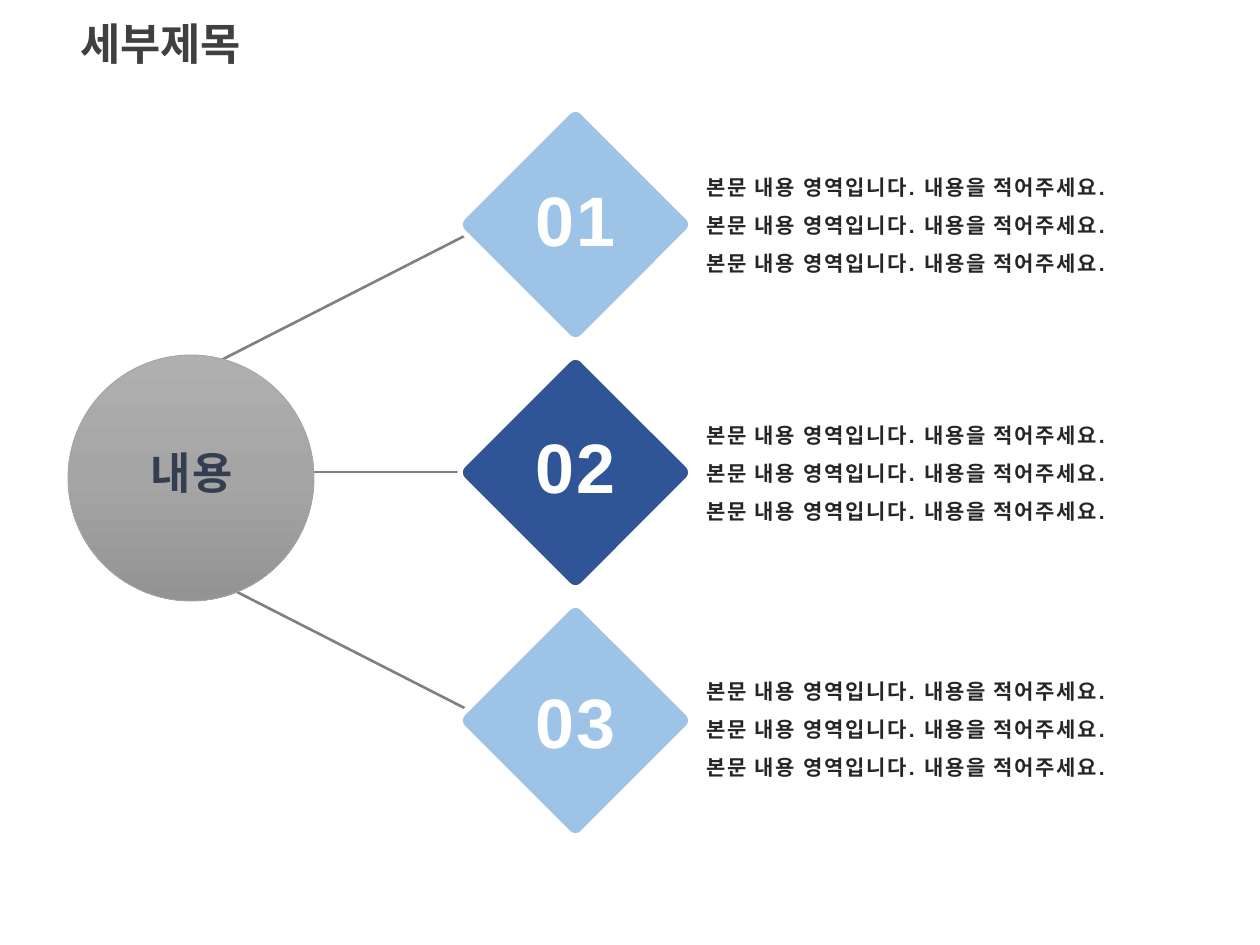
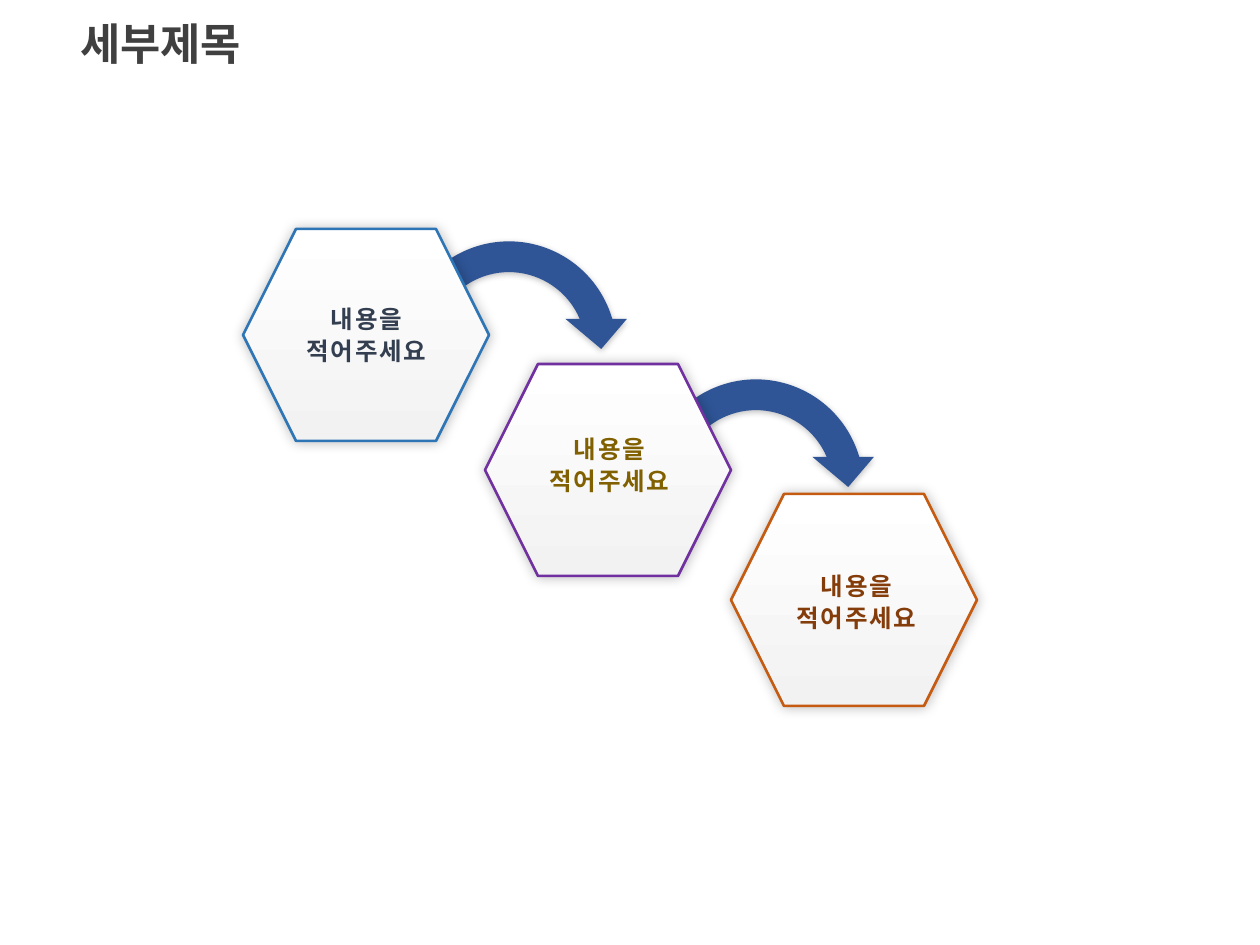
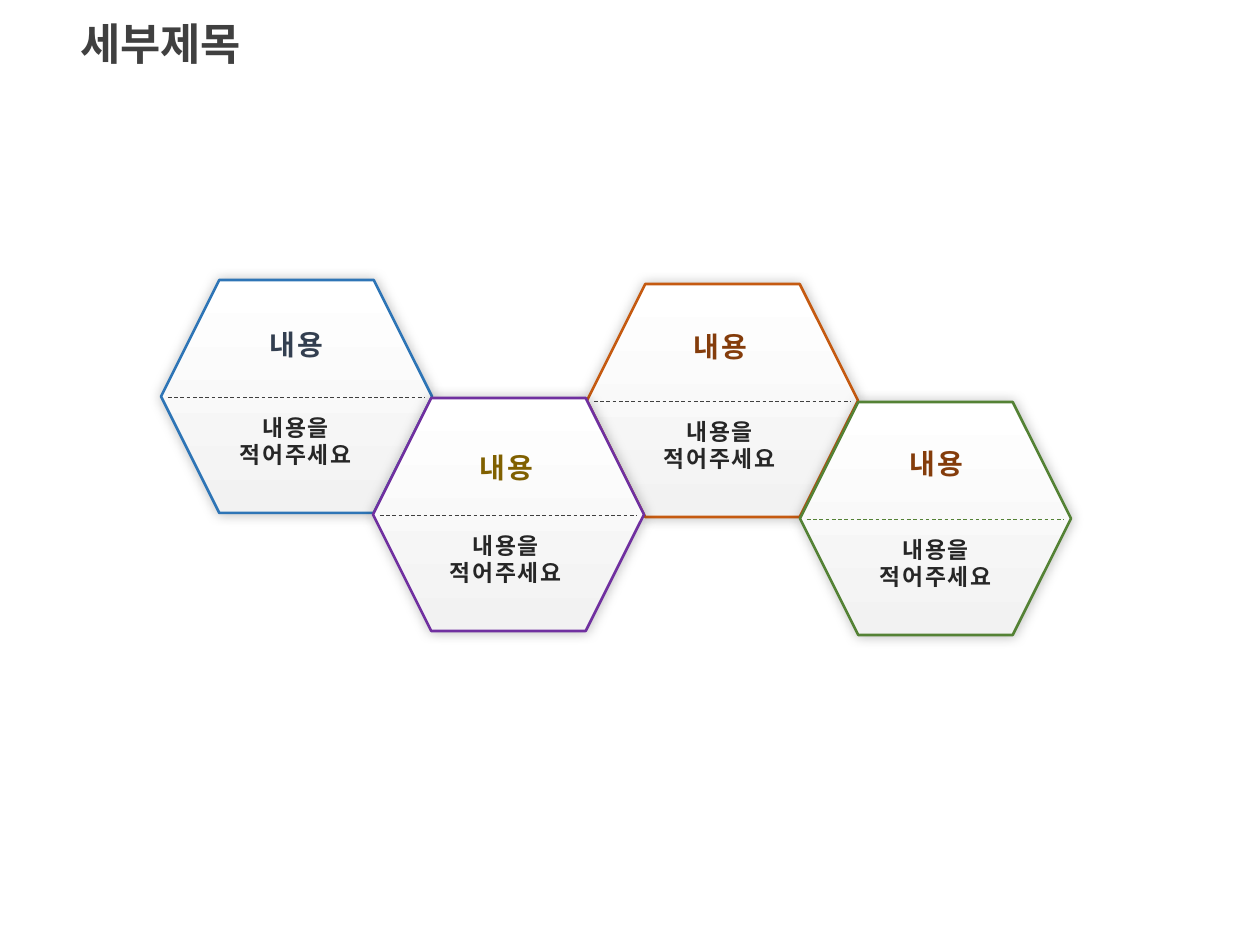
from copy import deepcopy

from lxml import etree
from pptx import Presentation
from pptx.dml.color import RGBColor
from pptx.enum.dml import MSO_LINE
from pptx.enum.shapes import MSO_CONNECTOR, MSO_SHAPE
from pptx.enum.text import MSO_ANCHOR, MSO_AUTO_SIZE, PP_ALIGN
from pptx.oxml.ns import qn
from pptx.util import Emu, Pt

# Shared scale, enum members, fonts and colours
SCALE = 914400 / 126
LEFT, CENTER = PP_ALIGN.LEFT, PP_ALIGN.CENTER
MIDDLE, TOP = MSO_ANCHOR.MIDDLE, MSO_ANCHOR.TOP
GROW = MSO_AUTO_SIZE.SHAPE_TO_FIT_TEXT
STRAIGHT, DASH = MSO_CONNECTOR.STRAIGHT, MSO_LINE.DASH
OVAL, ROUND = MSO_SHAPE.OVAL, MSO_SHAPE.ROUNDED_RECTANGLE
HEXAGON, ARROW = MSO_SHAPE.HEXAGON, MSO_SHAPE.CIRCULAR_ARROW

LATIN, HANGUL, HEAD = "Arial", "Noto Sans CJK KR", "Calibri"

WHITE = RGBColor(0xFF, 0xFF, 0xFF)
PALE = RGBColor(0xF2, 0xF2, 0xF2)
INK = RGBColor(0x26, 0x26, 0x26)
DARK = RGBColor(0x40, 0x40, 0x40)
GREY = RGBColor(0x80, 0x80, 0x80)
SILVER = RGBColor(0xAF, 0xAF, 0xAF)
STEEL = RGBColor(0xA5, 0xA5, 0xA5)
ASH = RGBColor(0x93, 0x93, 0x93)
SKY = RGBColor(0x9D, 0xC3, 0xE6)
NAVY = RGBColor(0x2F, 0x55, 0x97)
SLATE = RGBColor(0x33, 0x3F, 0x50)
OLIVE = RGBColor(0x80, 0x60, 0x00)
BROWN = RGBColor(0x84, 0x3C, 0x0B)
BLUE = RGBColor(0x2E, 0x75, 0xB6)
PURPLE = RGBColor(0x70, 0x30, 0xA0)
ORANGE = RGBColor(0xC5, 0x5A, 0x11)
GREEN = RGBColor(0x54, 0x82, 0x35)

TITLE, TOPIC = "세부제목", "내용"
PROMPT = ["내용을", "적어주세요"]
BODY = ["본문 내용 영역입니다. 내용을 적어주세요."] * 3


def px(*values):
    return [Emu(round(value * SCALE)) for value in values]


def add_text(slide, box, lines, size, color, font=HANGUL, align=CENTER,
             pitch=None, track=100, anchor=TOP):
    """Bold text, one paragraph a line; pitch is the line spacing."""
    frame = slide.shapes.add_textbox(*px(*box)).text_frame
    frame.word_wrap = True
    frame.vertical_anchor = anchor
    if anchor == TOP:
        frame.auto_size = GROW
    frame.text = "\n".join(lines)
    for para in frame.paragraphs:
        para.alignment = align
        if pitch:
            para.line_spacing = pitch
        for run in para.runs:
            run.font.size = Pt(size)
            run.font.bold = True
            run.font.name = font
            run.font.color.rgb = color
            props = run.font._element
            etree.SubElement(props, qn("a:ea")).set("typeface", HANGUL)
            if track:
                props.set("spc", str(track))


def add_form(slide, kind, box, fills, edge=None, width=0):
    """A preset shape; several fills make a gradient from top to bottom."""
    form = slide.shapes.add_shape(kind, *px(*box))
    form.shadow.inherit = False
    if len(fills) == 1:
        form.fill.solid()
        form.fill.fore_color.rgb = fills[0]
    else:
        form.fill.gradient()
        form.fill.gradient_angle = 270
        stops = form._element.spPr.find(".//" + qn("a:gsLst"))
        while len(stops) < len(fills):
            stops.append(deepcopy(stops[-1]))
        for i, stop in enumerate(form.fill.gradient_stops):
            stop.position = i / (len(fills) - 1)
            stop.color.rgb = fills[i]
    if edge is None:
        form.line.fill.background()
    else:
        form.line.color.rgb = edge
        form.line.width = Pt(width)
    return form


def add_shade(form, blur, dist, turn):
    effects = form._element.spPr.find(qn("a:effectLst"))
    shade = etree.SubElement(
        effects, qn("a:outerShdw"), blurRad=str(Pt(blur)),
        dist=str(Pt(dist)), dir=str(turn * 60000), algn="ctr",
        rotWithShape="0")
    color = etree.SubElement(shade, qn("a:srgbClr"), val="000000")
    etree.SubElement(color, qn("a:alpha"), val="25000")


def add_line(slide, ends, color, width, dash=None):
    line = slide.shapes.add_connector(STRAIGHT, *px(*ends))
    line.line.color.rgb = color
    line.line.width = Pt(width)
    if dash:
        line.line.dash_style = dash
    etree.SubElement(line._element.spPr, qn("a:effectLst"))


def add_hex(slide, box, edge):
    form = add_form(slide, HEXAGON, box, [WHITE, PALE], edge, 1.5)
    add_shade(form, 7, 0, 0)


def add_page(deck):
    slide = deck.slides.add_slide(deck.slide_layouts[6])
    add_text(slide, (68, 13, 1137, 67), [TITLE], 25, DARK, HEAD, LEFT,
             pitch=0.9, track=0, anchor=MIDDLE)
    return slide


def add_hub(deck):
    slide = add_page(deck)
    # Spokes behind the hub
    for ends in ((185, 472, 517, 472), (141, 401, 537, 199),
                 (141, 543, 537, 745)):
        add_line(slide, ends, GREY, 1.5)
    add_form(slide, OVAL, (68, 355, 246, 246), [SILVER, STEEL, ASH],
             STEEL, 0.5)
    add_text(slide, (83, 461, 217, 47), [TOPIC], 25, SLATE, LATIN,
             pitch=Pt(18))
    # Numbered diamonds with their notes
    rows = ((SKY, 170, 156), (NAVY, 417, 404), (SKY, 672, 660))
    for i, (color, num_y, note_y) in enumerate(rows):
        gem = add_form(slide, ROUND, (491, 140 + 248 * i, 169, 169),
                       [color], WHITE, 3)
        gem.rotation = 315
        gem.adjustments[0] = 0.06
        add_text(slide, (445, num_y, 261, 97), [f"{i + 1:02}"], 40, WHITE,
                 LATIN)
        add_text(slide, (694, note_y, 496, 127), BODY, 12, INK, LATIN, LEFT,
                 pitch=Pt(21.6))


def add_steps(deck):
    slide = add_page(deck)
    # Arrows tucked behind the hexagons
    for x, y in ((633, 364), (386, 226)):
        arrow = add_form(slide, ARROW, (x, y, 246, 246), [NAVY])
        add_shade(arrow, 4, 1, 90)
    # Hexagon corner, edge, text corner, text colour
    steps = ((243, 229, BLUE, 258, 296, SLATE),
             (485, 364, PURPLE, 501, 426, OLIVE),
             (731, 494, ORANGE, 748, 563, BROWN))
    for x, y, edge, text_x, text_y, color in steps:
        add_hex(slide, (x, y, 246, 212), edge)
        add_text(slide, (text_x, text_y, 217, 77), PROMPT, 14, color,
                 pitch=Pt(18))


def add_chain(deck):
    slide = add_page(deck)
    # Hexagon corner, edge, divider, topic corner, topic colour
    cells = ((587, 284, ORANGE, DARK, 612, 325, BROWN),
             (161, 280, BLUE, DARK, 188, 323, SLATE),
             (373, 398, PURPLE, DARK, 398, 446, OLIVE),
             (800, 402, GREEN, GREEN, 828, 442, BROWN))
    for x, y, edge, rule, text_x, text_y, color in cells:
        add_hex(slide, (x, y, 271, 233), edge)
        add_line(slide, (x + 7, y + 117, x + 264, y + 117), rule, 0.5, DASH)
        add_text(slide, (text_x, text_y, 217, 44), [TOPIC], 16, color,
                 pitch=Pt(18))
        add_text(slide, (text_x + 10, y + 128, 195, 68), PROMPT, 13, INK,
                 pitch=Pt(15.5))


def main():
    deck = Presentation()
    deck.slide_width, deck.slide_height = px(1260, 945)
    add_hub(deck)
    add_steps(deck)
    add_chain(deck)
    deck.save("out.pptx")


if __name__ == "__main__":
    main()
